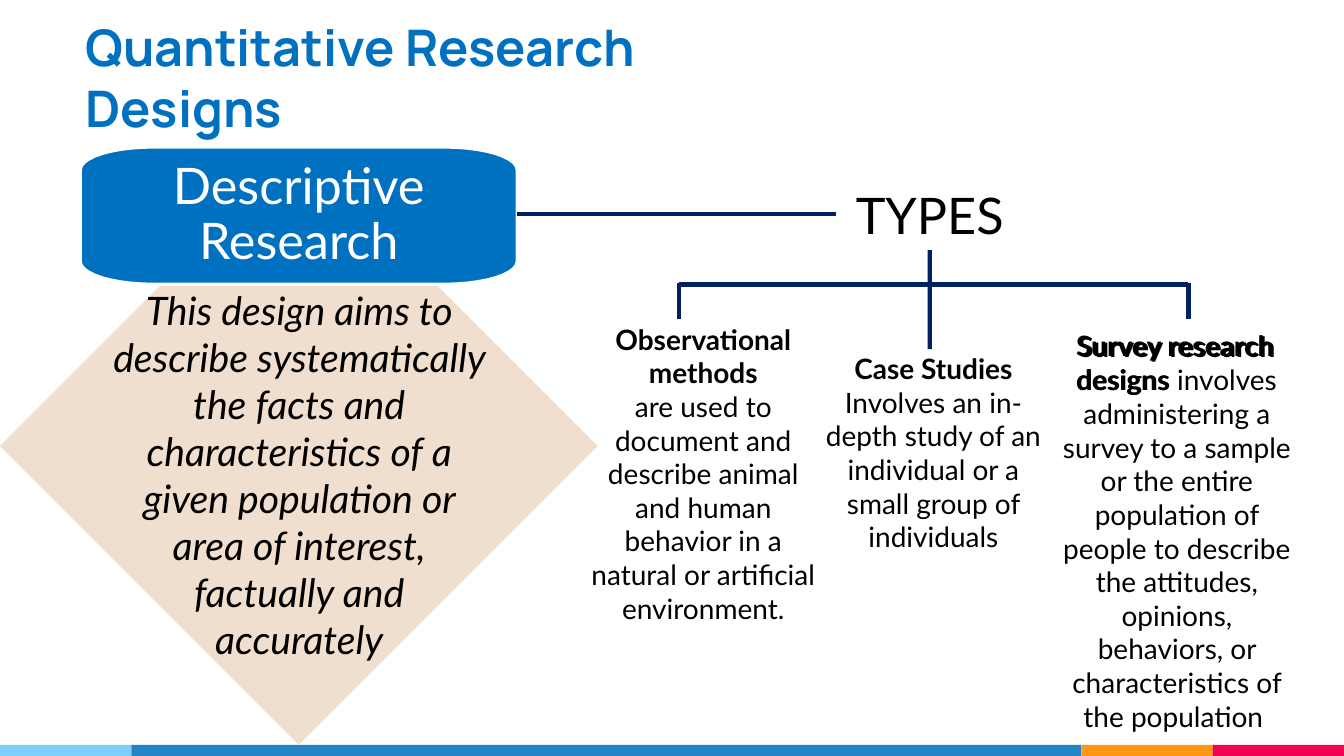
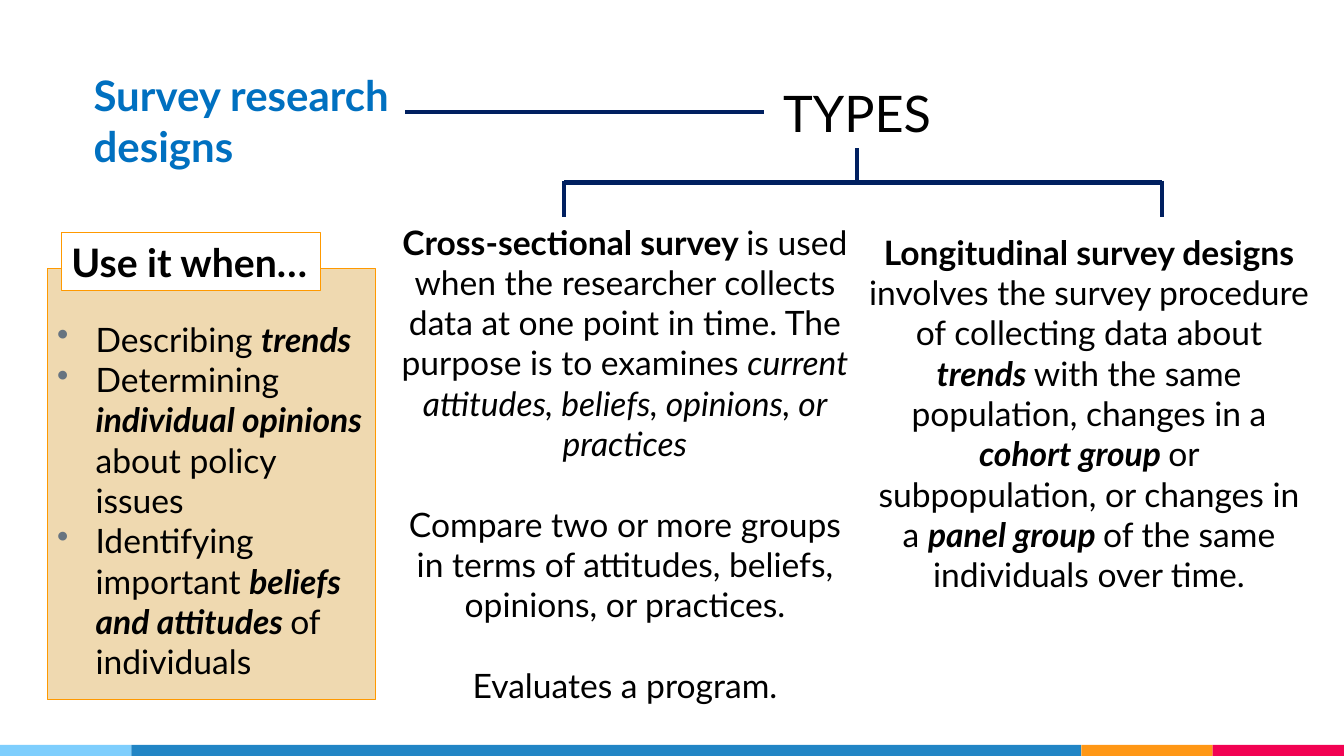
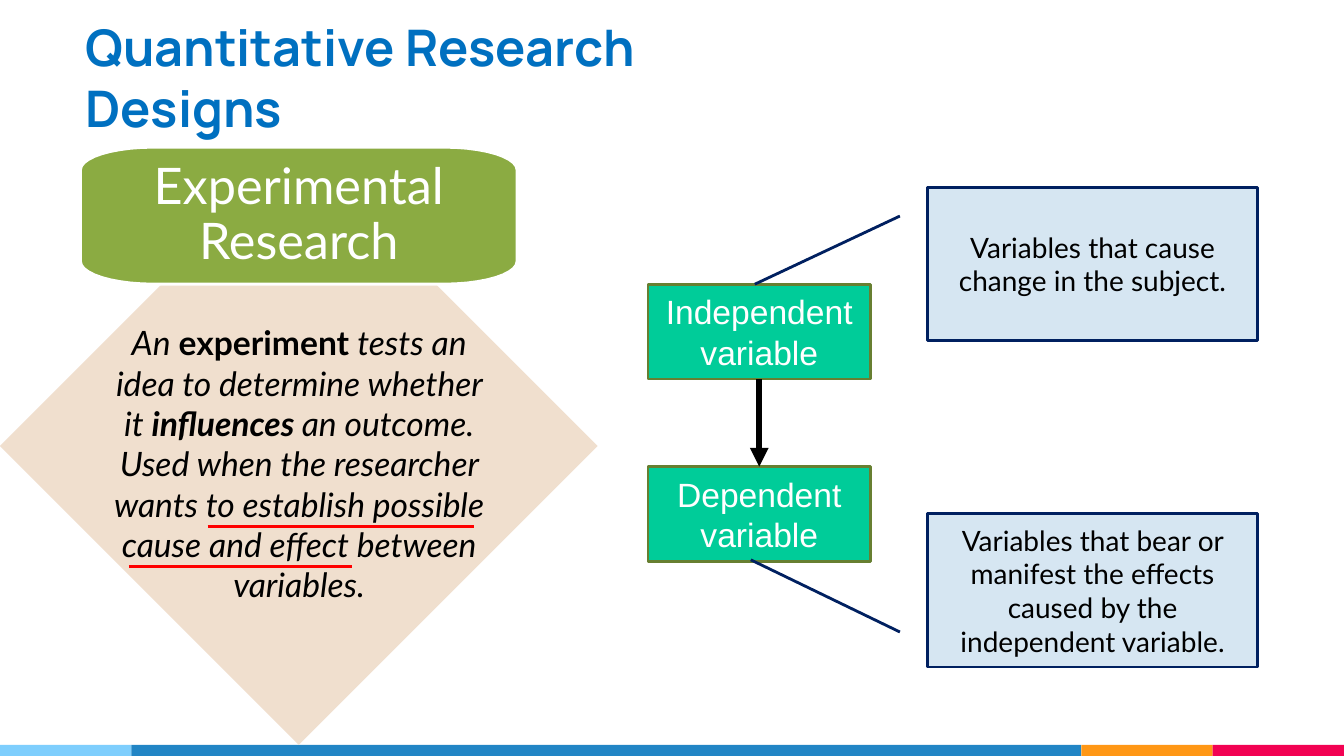
import math
import pptx
import pptx.util
import pptx.dml.color
import pptx.enum.shapes
import pptx.enum.text
import pptx.oxml
import pptx.oxml.ns

Cm = pptx.util.Cm
Pt = pptx.util.Pt
RGBColor = pptx.dml.color.RGBColor
Shape = pptx.enum.shapes.MSO_SHAPE
Align = pptx.enum.text.PP_ALIGN
Anchor = pptx.enum.text.MSO_ANCHOR
qn = pptx.oxml.ns.qn

WHITE = RGBColor(0xFF, 0xFF, 0xFF)
BLACK = RGBColor(0, 0, 0)
BLUE = RGBColor(0x00, 0x70, 0xC0)
NAVY = RGBColor(0x00, 0x20, 0x60)
OLIVE = RGBColor(0x8B, 0xAB, 0x42)
MOSS = RGBColor(0x67, 0x7F, 0x31)
MINT = RGBColor(0x00, 0xCC, 0x99)
ICE = RGBColor(0xD6, 0xE6, 0xF2)
CREAM = RGBColor(0xF0, 0xDF, 0xCE)
SAND = RGBColor(0xEF, 0xD9, 0xB0)
AMBER = RGBColor(0xFF, 0x99, 0x00)
RED = RGBColor(0xFF, 0, 0)
SLATE = RGBColor(0x67, 0x74, 0x80)
BANDS = [
    (3.31, RGBColor(0x7E, 0xCE, 0xFD)),
    (23.94, RGBColor(0x21, 0x85, 0xC5)),
    (3.31, RGBColor(0xFF, 0x97, 0x15)),
    (3.31, RGBColor(0xF2, 0x02, 0x53)),
]
WIDE, HIGH = 33.87, 19.05
HEAD = [[("Quantitative Research Designs", "b")]]


def place(area):
    return [Cm(v) for v in area]


def paint(shape, fill, line=None, weight=1):
    shape.shadow.inherit = False
    shape.fill.solid()
    shape.fill.fore_color.rgb = fill
    if line is None:
        shape.line.fill.background()
    else:
        shape.line.color.rgb = line
        shape.line.width = Pt(weight)


def write(shape, paras, size, color=BLACK, font="Lato", align=Align.CENTER,
          anchor=Anchor.TOP, pad=(0.25, 0.25), gap=0, lead=None):
    frame = shape.text_frame
    frame.word_wrap = True
    frame.vertical_anchor = anchor
    frame.margin_left = frame.margin_right = Cm(pad[0])
    frame.margin_top = frame.margin_bottom = Cm(pad[1])
    for n, runs in enumerate(paras):
        para = frame.paragraphs[0] if n == 0 else frame.add_paragraph()
        para.alignment = align
        para.line_spacing = lead
        if n and gap:
            para.space_before = Pt(gap)
        for text, style in runs:
            run = para.add_run()
            run.text = text
            run.font.name = font
            run.font.size = Pt(size)
            run.font.color.rgb = color
            run.font.bold = "b" in style
            run.font.italic = "i" in style
    return frame


def label(slide, area, paras, size, **look):
    box = slide.shapes.add_textbox(*place(area))
    write(box, paras, size, **look)
    return box


def block(slide, kind, area, fill, line=None, weight=1):
    shape = slide.shapes.add_shape(kind, *place(area))
    paint(shape, fill, line, weight)
    return shape


def rule(slide, start, end, color=NAVY, weight=3):
    line = slide.shapes.add_connector(
        pptx.enum.shapes.MSO_CONNECTOR.STRAIGHT, *place(start + end))
    line.line.color.rgb = color
    line.line.width = Pt(weight)
    pptx.oxml.ns
    line.element.spPr.append(pptx.oxml.parse_xml(
        '<a:effectLst xmlns:a="http://schemas.openxmlformats.org/drawingml/2006/main"/>'))
    return line


def footer(slide, layout):
    tree = layout.shapes.element
    for holder in list(layout.placeholders):
        tree.remove(holder.element)
    left, tall = 0, 0.28
    for wide, color in BANDS:
        band = block(slide, Shape.RECTANGLE,
                     (left, HIGH - tall, wide, tall), color)
        tree.append(band.element)
        left += wide


def title(slide):
    label(slide, (1.9, 1.12, 19.46, 2.59), HEAD, 36, color=BLUE,
          font="Manrope", align=Align.LEFT, anchor=Anchor.BOTTOM)


def pill(slide, area, fill, words):
    left, top, wide, tall = area
    rx, ry, steps = 1.83, 0.57, 10
    hubs = [(left + wide - rx, top + tall - ry), (left + rx, top + tall - ry),
            (left + rx, top + ry), (left + wide - rx, top + ry)]
    dots = []
    for n, (x, y) in enumerate(hubs):
        for k in range(steps + 1):
            turn = (n + k / steps) * math.pi / 2
            dots.append((Cm(x + rx * math.cos(turn)),
                         Cm(y + ry * math.sin(turn))))
    path = slide.shapes.build_freeform(*dots[0])
    path.add_line_segments(dots[1:], close=True)
    shape = path.convert_to_shape()
    paint(shape, fill, WHITE, 2)
    write(shape, [[(word, "")] for word in words], 36, color=WHITE,
          anchor=Anchor.MIDDLE, pad=(0.53, 0.53), lead=0.9)


def panel(slide, area, fill, words, paras, size, drop):
    left, top, wide, tall = area
    block(slide, Shape.DIAMOND, area, CREAM)
    pill(slide, (left + 2.03, top, 11, 3.45), fill, words)
    label(slide, (left + 2.55, top + drop, 9.98, 7.5), paras, size)


def tree(slide, area, start, drops, stem):
    left, top, wide, tall = area
    mid, base, step = left + wide / 2, top + tall, 0.87
    box = label(slide, area, [[("TYPES", "")]], 36, pad=(0.25, 0.13))
    lead = rule(slide, (start, top + tall / 2), (left, top + tall / 2))
    lead.end_connect(box, 1)
    trunk = rule(slide, (mid, base), (mid, base + stem))
    trunk.begin_connect(box, 2)
    rail = base + step
    rule(slide, (drops[0], rail), (drops[-1], rail))
    for x in drops:
        rule(slide, (x, rail - 0.05), (x, rail + step))


def usage(slide, area, head, paras):
    left, top, wide, tall = area
    sheet = block(slide, Shape.RECTANGLE, area, SAND, AMBER, 0.75)
    frame = write(sheet, paras, 24, align=Align.LEFT)
    frame.margin_top = Cm(1.27)
    for para in frame.paragraphs:
        props = para._p.get_or_add_pPr()
        props.set("marL", str(Cm(0.97)))
        props.set("indent", str(-Cm(0.97)))
        tint = props.makeelement(qn("a:buClr"), {})
        tint.append(tint.makeelement(qn("a:srgbClr"), {"val": str(SLATE)}))
        props.append(tint)
        props.append(props.makeelement(qn("a:buChar"), {"char": "•"}))
    tag = block(slide, Shape.RECTANGLE,
                (left + 0.36, top - 0.89, 6.53, 1.45), WHITE, AMBER, 0.75)
    write(tag, [[(head, "b")]], 28, align=Align.LEFT, pad=(0.25, 0.13))


def cause(slide, area, pairs):
    left, top, wide, tall = area
    boxes = []
    for n, (name, note, shift, bends) in enumerate(pairs):
        y = top + n * 4.6
        box = block(slide, Shape.RECTANGLE, (left, y, wide, tall),
                    MINT, MOSS, 2)
        write(box, [[(name, "")]], 24, color=WHITE, font="Arial",
              anchor=Anchor.MIDDLE, pad=(0.25, 0.13))
        boxes.append(box)
        call = block(slide, Shape.LINE_CALLOUT_1,
                     (left + 7.04, y + shift, 8.33, 3.86), ICE, NAVY, 2)
        for k, bend in enumerate(bends):
            call.adjustments[k] = bend
        write(call, [[(note, "")]], 20, anchor=Anchor.MIDDLE,
              pad=(0.25, 0.13))
    mid = left + wide / 2
    arrow = rule(slide, (mid, top + tall), (mid, top + 4.6), BLACK, 4.5)
    arrow.begin_connect(boxes[0], 2)
    arrow.end_connect(boxes[1], 0)
    line = arrow.line._get_or_add_ln()
    line.append(line.makeelement(qn("a:tailEnd"), {"type": "triangle"}))


def describe(slide):
    title(slide)
    panel(slide, (0, 3.71, 15.06, 15.06), BLUE, ["Descriptive", "Research"],
          [[("This design aims to describe systematically the facts and "
             "characteristics of a given population or area of interest, "
             "factually and accurately", "i")]], 28, 3.25)
    tree(slide, (21.08, 4.5, 4.7, 1.8), 13.03, [17.12, 29.95], 2.5)
    label(slide, (14.6, 7.87, 6.25, 9.02), [
        [("Observational methods", "b")],
        [("are used to document and describe animal and human behavior in "
          "a natural or artificial environment.", "")]], 20)
    label(slide, (20.4, 8.61, 6.25, 9.02), [
        [("Case Studies", "b")],
        [("Involves an in-depth study of an individual or a small group of "
          "individuals", "")]], 20)
    label(slide, (26.42, 8.05, 6.48, 6.68), [
        [("Survey research designs ", "b"),
         ("involves administering a survey to a sample or the entire "
          "population of people to describe the attitudes, opinions, "
          "behaviors, or characteristics of the population ", "")]], 20)
    label(slide, (26.87, 8.15, 6.07, 1.96),
          [[("Survey research designs", "b")]], 20,
          align=Align.LEFT, pad=(0.25, 0.13))


def survey(slide):
    usage(slide, (1.19, 6.76, 8.28, 10.87), "Use it when…", [
        [("Describing ", ""), ("trends", "bi")],
        [("Determining ", ""), ("individual opinions ", "bi"),
         ("about policy issues", "")],
        [("Identifying important ", ""), ("beliefs and attitudes ", "bi"),
         ("of individuals", "")]])
    label(slide, (2.11, 1.63, 10.52, 2.82),
          [[("Survey research designs", "b")]], 30, color=BLUE,
          align=Align.LEFT, pad=(0.25, 0.13))
    tree(slide, (19.25, 1.93, 4.7, 1.8), 10.21, [14.22, 29.29], 0.87)
    label(slide, (9.83, 5.33, 11.84, 9.02), [
        [("Cross-sectional survey ", "b"),
         ("is used when the researcher collects data at one point in time. "
          "The purpose is to examines ", ""),
         ("current attitudes, beliefs, opinions, or practices", "i")],
        [("Compare two or more groups in terms of attitudes, beliefs, "
          "opinions, or practices.", "")],
        [("Evaluates a program.", "")]], 24, gap=28.8)
    label(slide, (21.64, 5.59, 11.61, 6.68), [
        [("Longitudinal survey designs ", "b"),
         ("involves the survey procedure of collecting data about ", ""),
         ("trends ", "bi"),
         ("with the same population, changes in a ", ""),
         ("cohort group ", "bi"),
         ("or subpopulation, or changes in a ", ""),
         ("panel group ", "bi"),
         ("of the same individuals over time.", "")]], 24)


def test(slide):
    title(slide)
    panel(slide, (0, 3.71, 15.06, 15.06), OLIVE,
          ["Experimental", "Research"], [
              [("An ", "i"), ("experiment ", "b"),
               ("tests an idea to determine whether it ", "i"),
               ("influences ", "bi"), ("an outcome.", "i")],
              [("Used when the researcher wants to establish possible cause "
                "and effect between variables.", "i")]], 24, 4.16)
    cause(slide, (16.33, 7.16, 5.61, 2.39), [
        ("Independent variable", "Variables that cause change in the subject.",
         -2.44, (0.188, -0.083, 0.633, -0.522)),
        ("Dependent variable",
         "Variables that bear or manifest the effects caused by the "
         "independent variable.",
         1.19, (0.771, -0.083, 0.3, -0.534))])
    for x, end, y in [(5.23, 11.94, 13.26), (3.25, 8.86, 14.27)]:
        rule(slide, (x, y), (end, y), RED, 2.25)


def main():
    deck = pptx.Presentation()
    deck.slide_width, deck.slide_height = Cm(WIDE), Cm(HIGH)
    blank = deck.slide_layouts[6]
    slides = [deck.slides.add_slide(blank) for n in range(3)]
    footer(slides[0], blank)
    for draw, slide in zip([describe, survey, test], slides):
        draw(slide)
    deck.save("out.pptx")


if __name__ == "__main__":
    main()
